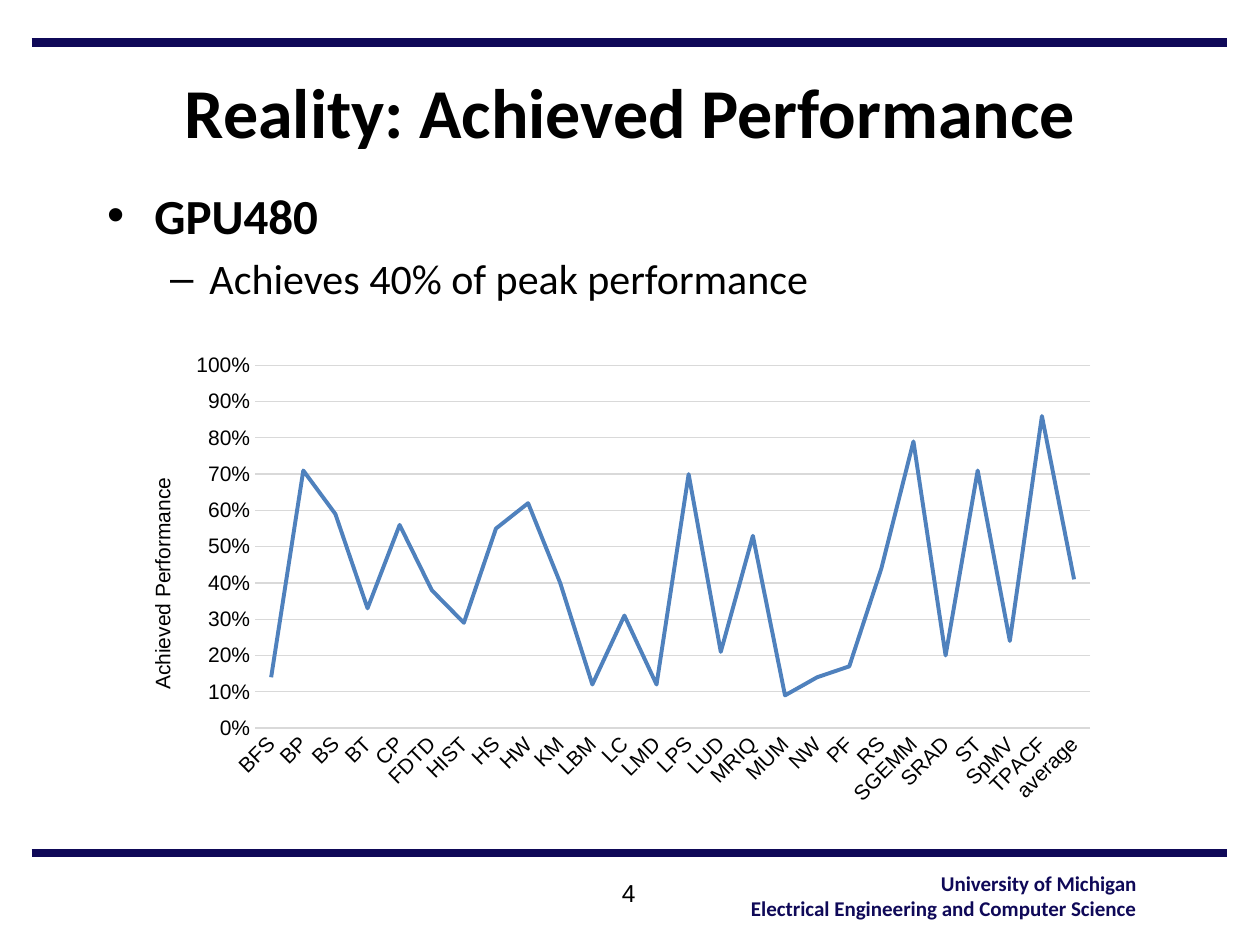
from lxml.etree import SubElement
from pptx import Presentation
from pptx.chart.data import CategoryChartData
from pptx.dml.color import RGBColor
from pptx.enum.chart import XL_CHART_TYPE, XL_TICK_MARK
from pptx.enum.shapes import MSO_CONNECTOR
from pptx.enum.text import MSO_ANCHOR, MSO_AUTO_SIZE, PP_ALIGN
from pptx.oxml.ns import qn
from pptx.util import Inches, Pt

NAVY = RGBColor(0x0F, 0x09, 0x58)
BLACK = RGBColor(0, 0, 0)
GRID_GRAY = RGBColor(0xD9, 0xD9, 0xD9)
SERIES_BLUE = RGBColor(0x4F, 0x81, 0xBD)

PERFORMANCE = {
    "BFS": 0.14, "BP": 0.71, "BS": 0.59, "BT": 0.33, "CP": 0.56,
    "FDTD": 0.38, "HIST": 0.29, "HS": 0.55, "HW": 0.62, "KM": 0.4,
    "LBM": 0.12, "LC": 0.31, "LMD": 0.12, "LPS": 0.7, "LUD": 0.21,
    "MRIQ": 0.53, "MUM": 0.09, "NW": 0.14, "PF": 0.17, "RS": 0.44,
    "SGEMM": 0.79, "SRAD": 0.2, "ST": 0.71, "SpMV": 0.24,
    "TPACF": 0.86, "average": 0.41,
}


def style_font(font, size, name="Calibri", color=BLACK, bold=False):
    font.size = Pt(size)
    font.name = name
    font.bold = bold
    font.color.rgb = color


def fill_text(shape, lines, align=None, **style):
    frame = shape.text_frame
    frame.auto_size = MSO_AUTO_SIZE.NONE
    frame.text = "\n".join(lines)
    for para in frame.paragraphs:
        para.alignment = align
        for span in para.runs:
            style_font(span.font, **style)
    return frame


def move(shape, left, top, width, height):
    shape.left, shape.top = Inches(left), Inches(top)
    shape.width, shape.height = Inches(width), Inches(height)


def add_rule(page, y):
    rule = page.shapes.add_connector(
        MSO_CONNECTOR.STRAIGHT, Inches(0.25), Inches(y), Inches(9.74), Inches(y))
    rule.line.color.rgb = NAVY
    rule.line.width = Pt(5)
    SubElement(rule._element.spPr, qn("a:effectLst"))


def add_label(page, area, lines, align, wrap=True, **style):
    box = page.shapes.add_textbox(*(Inches(length) for length in area))
    fill_text(box, lines, align, **style).word_wrap = wrap


def fill_title(page):
    title = page.shapes.title
    move(title, 0.75, 0.42, 8.5, 0.91)
    frame = fill_text(title, ["Reality: Achieved Performance"],
                      PP_ALIGN.CENTER, size=40, bold=True)
    frame.vertical_anchor = MSO_ANCHOR.MIDDLE


def fill_body(page):
    body = page.placeholders[1]
    move(body, 0.75, 1.42, 8.5, 1)
    frame = fill_text(body, ["GPU480", "Achieves 40% of peak performance"], size=24)
    heading, detail = frame.paragraphs
    heading.space_before = Pt(0)
    style_font(heading.runs[0].font, 28, bold=True)
    detail.level = 1


def set_layout(element, **shares):
    """Place a chart part by shares of the chart's size."""
    layout = element.find(qn("c:layout"))
    if layout is None:
        layout = SubElement(element, qn("c:layout"))
        element.insert(0, layout)
    manual = SubElement(layout, qn("c:manualLayout"))
    if "w" in shares:
        SubElement(manual, qn("c:layoutTarget")).set("val", "inner")
    for key in ("xMode", "yMode"):
        SubElement(manual, qn("c:" + key)).set("val", "edge")
    for key, share in shares.items():
        SubElement(manual, qn("c:" + key)).set("val", str(share))


def style_axes(chart):
    for axis in (chart.category_axis, chart.value_axis):
        axis.major_tick_mark = axis.minor_tick_mark = XL_TICK_MARK.NONE
        style_font(axis.tick_labels.font, 12, "Arial")

    categories = chart.category_axis
    categories.format.line.color.rgb = GRID_GRAY
    categories.format.line.width = Pt(0.75)
    categories._element.get_or_add_txPr().bodyPr.set("rot", "-2700000")

    values = chart.value_axis
    values.minimum_scale, values.maximum_scale, values.major_unit = 0, 1, 0.1
    values.tick_labels.number_format = "0%"
    values.tick_labels.number_format_is_linked = False
    values.format.line.fill.background()
    values.major_gridlines.format.line.color.rgb = GRID_GRAY
    values.major_gridlines.format.line.width = Pt(0.75)
    title = values.axis_title
    title.text_frame.text = "Achieved Performance"
    style_font(title.text_frame.paragraphs[0].runs[0].font, 12, "Arial")
    set_layout(title._element, x=0.03, y=0.27)


def add_performance_chart(page):
    data = CategoryChartData(number_format="0%")
    data.categories = list(PERFORMANCE)
    data.add_series("Series 1", list(PERFORMANCE.values()))
    area = (Inches(length) for length in (0.92, 2.75, 7.89, 3.74))
    chart = page.shapes.add_chart(XL_CHART_TYPE.LINE, *area, data).chart
    chart.has_legend = chart.has_title = False
    style_font(chart.font, 10, "Arial")
    plot = chart.plots[0]
    plot.vary_by_categories = False
    series = plot.series[0]
    series.smooth = False
    series.format.line.color.rgb = SERIES_BLUE
    series.format.line.width = Pt(2.25)
    style_axes(chart)
    set_layout(chart._chartSpace.chart.plotArea, x=0.14, y=0.04, w=0.84, h=0.77)


def main():
    deck = Presentation()
    deck.slide_width, deck.slide_height = Inches(10), Inches(7.5)
    page = deck.slides.add_slide(deck.slide_layouts[1])
    for y in (0.34, 6.77):
        add_rule(page, y)
    add_label(page, (5.82, 6.86, 3.3, 0.5),
              ["University of Michigan", "Electrical Engineering and Computer Science"],
              PP_ALIGN.RIGHT, wrap=False, size=12, color=NAVY, bold=True)
    fill_title(page)
    add_label(page, (3.95, 6.92, 2.08, 0.5), ["4"], PP_ALIGN.CENTER,
              size=14, name="Arial")
    fill_body(page)
    add_performance_chart(page)
    deck.save("out.pptx")


if __name__ == "__main__":
    main()
